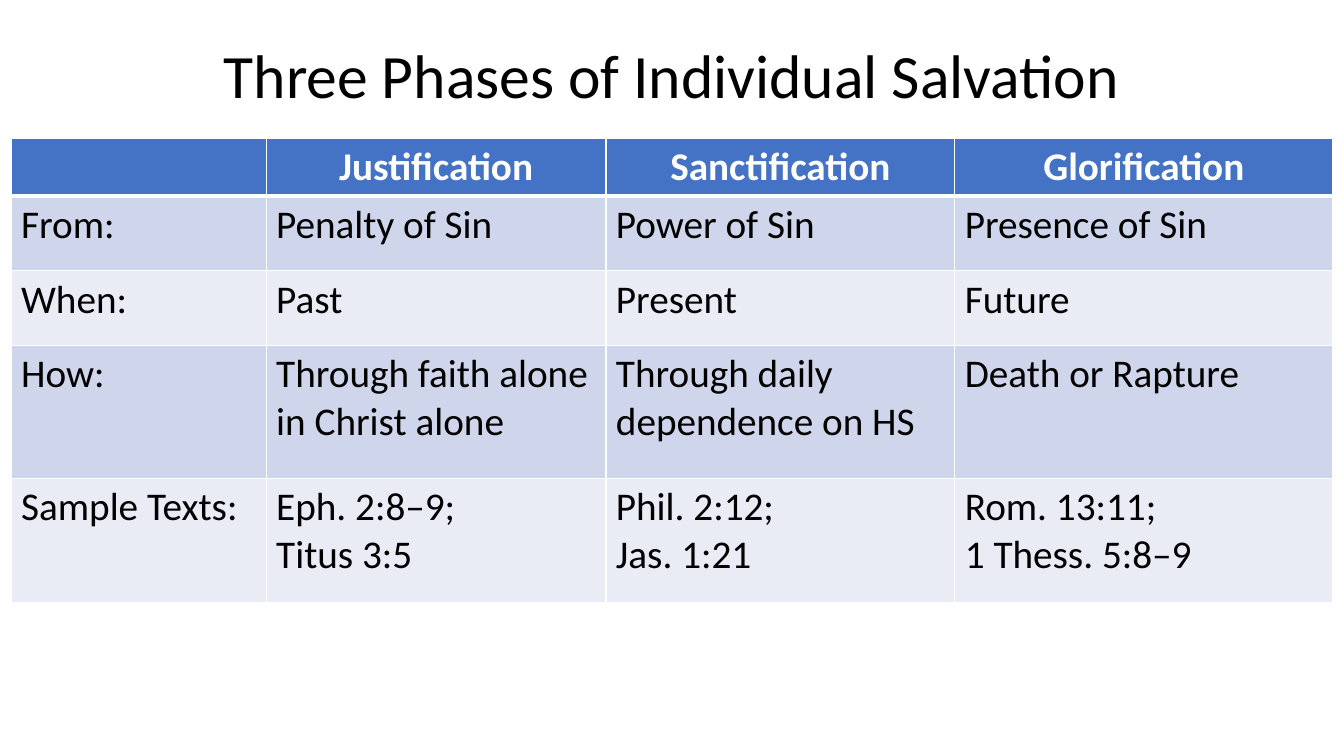
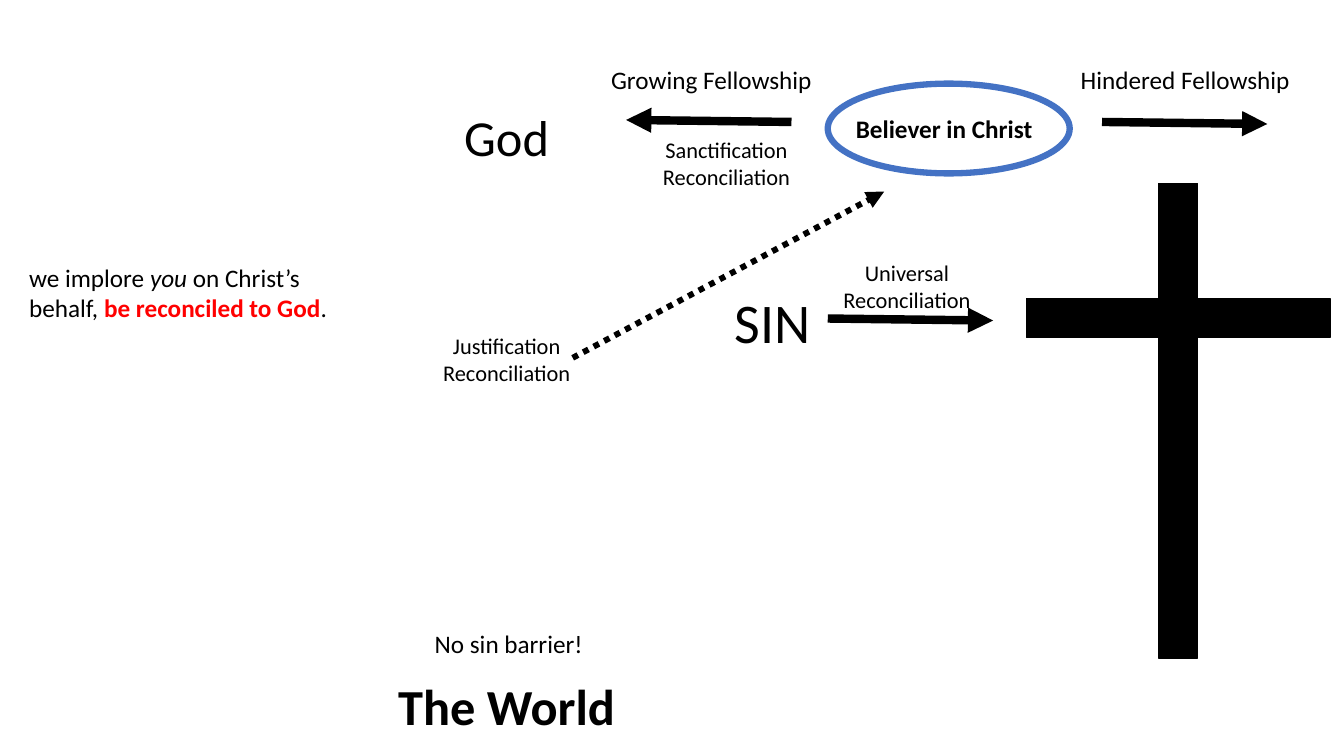
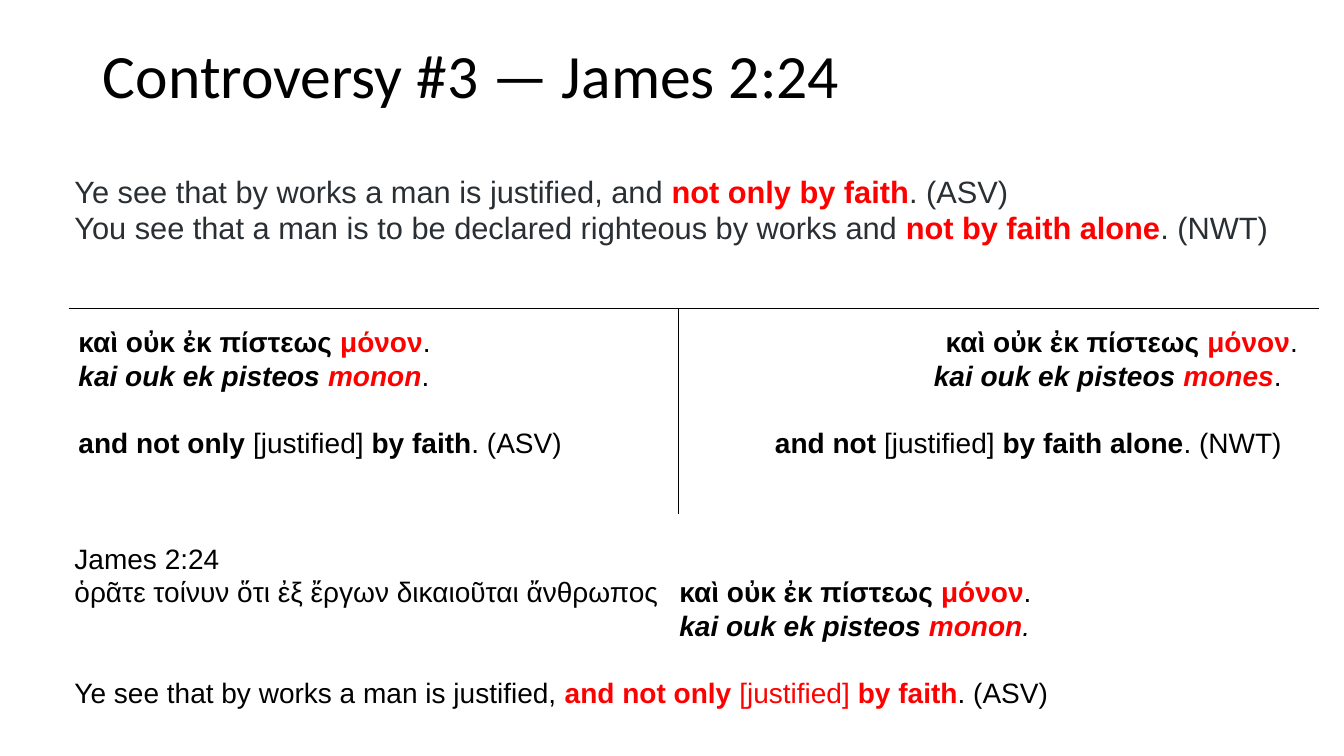
from lxml.etree import SubElement
from pptx import Presentation
from pptx.dml.color import RGBColor
from pptx.enum.dml import MSO_LINE
from pptx.enum.shapes import MSO_CONNECTOR, MSO_SHAPE
from pptx.enum.text import MSO_ANCHOR, MSO_AUTO_SIZE, PP_ALIGN
from pptx.oxml.ns import qn
from pptx.util import Inches, Pt

BLACK, WHITE, RED, BLUE = "000000", "FFFFFF", "FF0000", "4472C4"
BANDS = ("CFD5EA", "E9EBF5")
SLATE = "292F33"
LEFT, CENTER, RIGHT = PP_ALIGN.LEFT, PP_ALIGN.CENTER, PP_ALIGN.RIGHT


def color(value):
    return RGBColor.from_string(value)


def inches(*lengths):
    return [Inches(length) for length in lengths]


class SlideWriter:
    def __init__(self):
        self.deck = Presentation()
        self.deck.slide_width, self.deck.slide_height = inches(13.33, 7.5)
        self.page = None

    def new_page(self, layout):
        self.page = self.deck.slides.add_slide(self.deck.slide_layouts[layout])

    def style(self, span, size, font="Calibri", ink=BLACK, marks=""):
        span.font.name = font
        span.font.size = Pt(size)
        span.font.bold = "b" in marks
        span.font.italic = "i" in marks
        span.font.color.rgb = color(RED if "r" in marks else ink)

    def title(self, text, place, align):
        self.new_page(5)
        title = self.page.shapes.title
        title.left, title.top, title.width, title.height = inches(*place)
        frame = title.text_frame
        frame.text = text
        frame.auto_size = MSO_AUTO_SIZE.NONE
        frame.vertical_anchor = MSO_ANCHOR.TOP
        para = frame.paragraphs[0]
        para.alignment = align
        para.line_spacing = 0.9
        self.style(para.runs[0], 44)

    def text(self, place, lines, size, align=CENTER, font="Calibri", ink=BLACK, leading=None):
        box = self.page.shapes.add_textbox(*inches(*place))
        frame = box.text_frame
        frame.word_wrap = True
        for index, line in enumerate(lines):
            para = frame.add_paragraph() if index else frame.paragraphs[0]
            para.alignment = align
            if leading:
                para.line_spacing = Pt(leading)
            for words, marks in line:
                span = para.add_run()
                span.text = words
                self.style(span, size, font, ink, marks)
        return frame.paragraphs

    def label(self, place, words, size, marks=""):
        self.text(place, [[(words, marks)]], size)

    def shape(self, kind, place, fill=None, line=BLACK, weight=1):
        shape = self.page.shapes.add_shape(kind, *inches(*place))
        shape.shadow.inherit = False
        if fill:
            shape.fill.solid()
            shape.fill.fore_color.rgb = color(fill)
        else:
            shape.fill.background()
        shape.line.color.rgb = color(line)
        shape.line.width = Pt(weight)

    def line(self, start, end, weight, arrow=False, dash=None):
        line = self.page.shapes.add_connector(MSO_CONNECTOR.STRAIGHT, *inches(*start, *end))
        line.line.color.rgb = color(BLACK)
        line.line.width = Pt(weight)
        if dash:
            line.line.dash_style = dash
        if arrow:
            SubElement(line.line._get_or_add_ln(), qn("a:tailEnd"), type="triangle")
        SubElement(line._element.spPr, qn("a:effectLst"))

    def border(self, cell, **weights):
        properties = cell._tc.get_or_add_tcPr()
        for index, side in enumerate("LRTB"):
            width = str(Pt(weights.get(side, 1)))
            edge = properties.makeelement(qn("a:ln" + side), {"w": width})
            fill = SubElement(edge, qn("a:solidFill"))
            SubElement(fill, qn("a:srgbClr"), val=WHITE)
            properties.insert(index, edge)

    def table(self, place, widths, heights, rows, size):
        table = self.page.shapes.add_table(len(rows), len(widths), *inches(*place)).table
        for column, width in zip(table.columns, widths):
            column.width = Inches(width)
        for index, (row, height, texts) in enumerate(zip(table.rows, heights, rows)):
            row.height = Inches(height)
            header = index == 0
            for cell, text in zip(row.cells, texts):
                cell.fill.solid()
                cell.fill.fore_color.rgb = color(BLUE if header else BANDS[(index - 1) % 2])
                self.border(cell, B=3 if header else 1, T=3 if index == 1 else 1)
                cell.text_frame.text = text
                for para in cell.text_frame.paragraphs:
                    para.alignment = CENTER if header else LEFT
                    para.font.size = Pt(size)
                    for span in para.runs:
                        self.style(span, size, ink=WHITE if header else BLACK, marks="b" if header else "")


def phases(writer):
    writer.title("Three Phases of Individual Salvation", (0, 0.4, 13.33, 0.8), CENTER)
    rows = [
        ("", "Justification", "Sanctification", "Glorification"),
        ("From:", "Penalty of Sin", "Power of Sin", "Presence of Sin"),
        ("When:", "Past", "Present", "Future"),
        ("How:", "Through faith alone in Christ alone", "Through daily dependence on HS", "Death or Rapture"),
        ("Sample Texts:", "Eph. 2:8–9;\nTitus 3:5", "Phil. 2:12;\nJas. 1:21", "Rom. 13:11;\n1 Thess. 5:8–9"),
    ]
    writer.table((0.11, 1.37, 13.11, 4.6), (2.53, 3.37, 3.46, 3.75), (0.57, 0.74, 0.74, 1.32, 1.23), rows, 28)


def reconciliation(writer):
    writer.new_page(6)
    writer.label((1.69, 6.65, 6.67, 0.71), "The World", 36, "b")
    writer.label((1.69, 1, 6.67, 0.71), "God", 36)
    writer.shape(MSO_SHAPE.RECTANGLE, (10.18, 2.96, 3.01, 0.39), BLACK)
    writer.shape(MSO_SHAPE.RECTANGLE, (11.49, 1.82, 0.39, 4.71), BLACK)
    writer.label((6.2, 2.8, 2.92, 0.77), "SIN", 40)
    plea = [("we implore ", ""), ("you", "i"), (" on Christ’s behalf, ", ""), ("be reconciled to God", "br"), (".", "")]
    writer.text((0.19, 2.55, 3.26, 0.71), [plea], 18, LEFT)
    for left, top, words, marks in (
        (3.89, 6.18, "No sin barrier!", ""),
        (5.9, 0.59, "Growing Fellowship", ""),
        (8.21, 1.08, "Believer in Christ", "b"),
        (10.6, 0.59, "Hindered Fellowship", ""),
    ):
        writer.label((left, top, 2.31, 0.4), words, 18, marks)
    writer.shape(MSO_SHAPE.OVAL, (8.21, 0.83, 2.4, 0.89), line=BLUE, weight=4.5)
    for left, top, kind in ((6.05, 1.3, "Sanctification"), (7.84, 2.52, "Universal"), (3.87, 3.25, "Justification")):
        writer.label((left, top, 2.31, 0.64), kind + " Reconciliation", 16)
    for start, end in (((8.21, 3.16), (9.85, 3.18)), ((10.93, 1.21), (12.57, 1.23)), ((7.85, 1.21), (6.21, 1.19))):
        writer.line(start, end, 6, arrow=True)
    writer.line((5.68, 3.55), (8.77, 1.9), 4.25, arrow=True, dash=MSO_LINE.ROUND_DOT)


def controversy(writer):
    writer.title("Controversy #3 — James 2:24", (0.92, 0.4, 11.5, 0.73), LEFT)
    greek = [("καὶ οὐκ ἐκ πίστεως ", "b"), ("μόνον", "br"), (".", "")]

    def spoken(word, stop=""):
        return [("kai ouk ek pisteos ", "bi"), (word, "bir"), (".", stop)]

    def arial(place, lines, align=LEFT):
        paras = writer.text(place, lines, 20, align, "Arial", leading=24)
        paras[-1].space_before = Pt(24)
        return paras

    asv = [("and not only ", "b"), ("[justified] ", ""), ("by faith", "b"), (". (ASV)", "")]
    nwt = [("and not ", "b"), ("[justified] ", ""), ("by faith alone", "b"), (". (NWT)", "")]
    arial((0.68, 3.17, 6.18, 1.45), [greek, spoken("monon"), asv])
    paras = arial((5.86, 3.17, 7.11, 1.45), [greek, spoken("mones"), nwt], RIGHT)
    paras[1]._p.get_or_add_pPr().set("marR", str(Inches(0.16)))
    writer.line((6.73, 5.1), (6.73, 3.06), 0.5)
    writer.line((0.68, 3.06), (13.08, 3.06), 0.5)

    verse = [
        [("James 2:24", "")],
        [("ὁρᾶτε τοίνυν ὅτι ἐξ ἔργων δικαιοῦται ἄνθρωπος\t", "")] + greek,
        [("\t", "i")] + spoken("monon", "i"),
        [("Ye see that by works a man is justified, ", ""), ("and not only", "br"), (" [justified] ", "r"),
         ("by faith", "br"), (". (ASV)", "")],
    ]
    for para in arial((0.64, 5.32, 12.17, 1.78), verse)[1:3]:
        stops = SubElement(para._p.get_or_add_pPr(), qn("a:tabLst"))
        SubElement(stops, qn("a:tab"), pos=str(Inches(6)), algn="l")

    versions = [
        [("Ye see that by works a man is justified, and ", ""), ("not only by faith", "br"), (". (ASV)", "")],
        [("You see that a man is to be declared righteous by works and ", ""), ("not by faith alone", "br"),
         (". (NWT)", "")],
    ]
    writer.text((0.64, 1.66, 12.44, 0.84), versions, 22, LEFT, "Arial", SLATE, 26.4)


def main():
    writer = SlideWriter()
    for build in (phases, reconciliation, controversy):
        build(writer)
    writer.deck.save("out.pptx")


if __name__ == "__main__":
    main()
